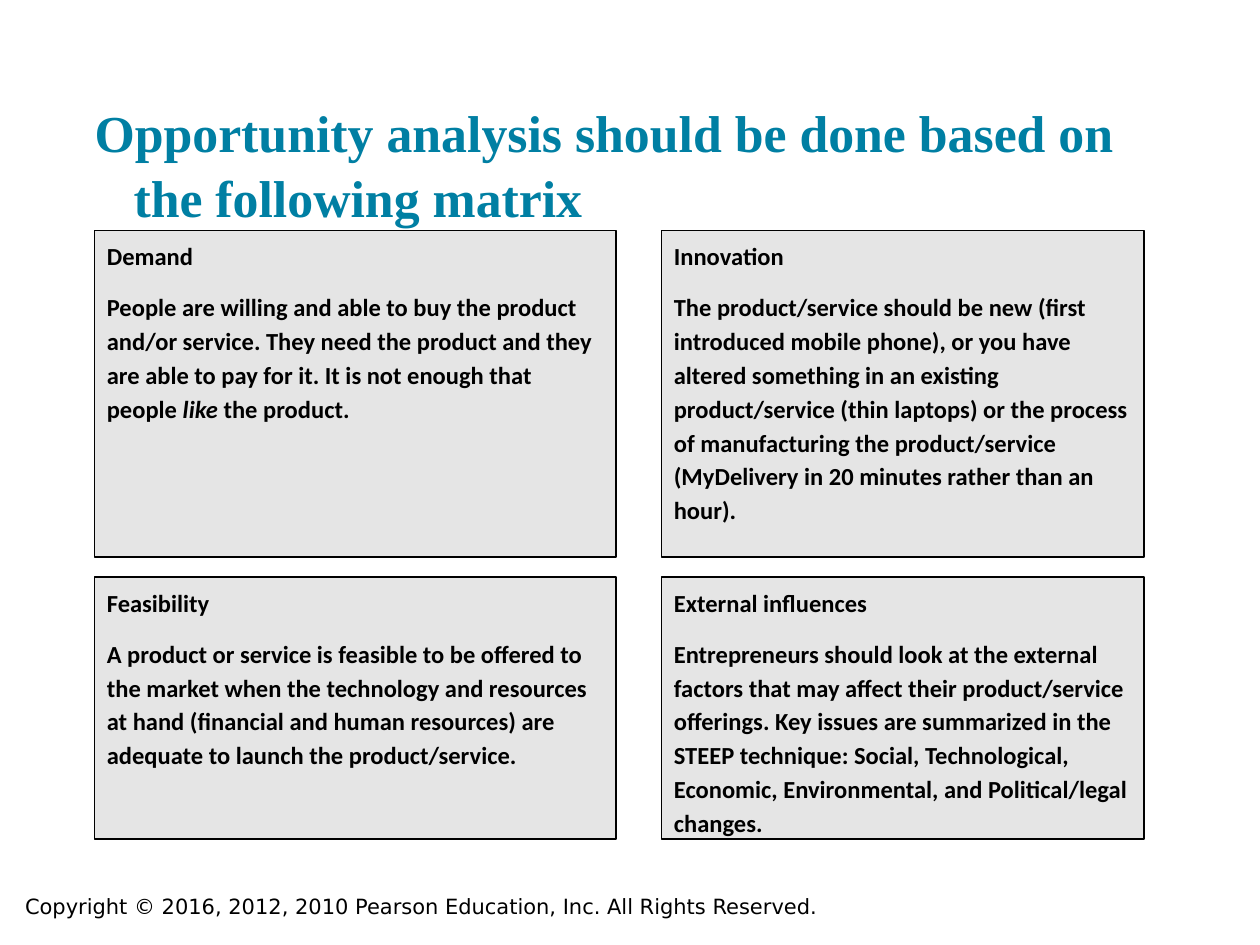
from dataclasses import dataclass

from pptx import Presentation
from pptx.dml.color import RGBColor
from pptx.enum.shapes import MSO_SHAPE as Shape
from pptx.enum.text import MSO_ANCHOR as Anchor, PP_ALIGN as Align
from pptx.util import Inches, Pt

COLORS = {"title": "007FA3", "text": "000000", "panel": "E5E5E5", "line": "000000"}
COLUMNS = [(0.75, 4.14), (5.25, 3.83)]  # left, width
ROWS = [(1.83, 2.59), (4.58, 2.08)]  # top, height
TITLE_INDENT = Inches(0.31)


@dataclass
class Panel:
    heading: str
    runs: list[tuple[str, bool]]  # text, italic


PANELS = [
    Panel("Demand", [
        ("People are willing and able to buy the product and/or service. They need "
         "the product and they are able to pay for it. It is not enough that people ", False),
        ("like ", True),
        ("the product.", False),
    ]),
    Panel("Innovation", [
        ("The product/service should be new (first introduced mobile phone), or you "
         "have altered something in an existing product/service (thin laptops) or the "
         "process of manufacturing the product/service (MyDelivery in 20 minutes "
         "rather than an hour).", False),
    ]),
    Panel("Feasibility", [
        ("A product or service is feasible to be offered to the market when the "
         "technology and resources at hand (financial and human resources) are "
         "adequate to launch the product/service.", False),
    ]),
    Panel("External influences", [
        ("Entrepreneurs should look at the external factors that may affect their "
         "product/service offerings. Key issues are summarized in the STEEP technique: "
         "Social, Technological, Economic, Environmental, and Political/legal changes.", False),
    ]),
]


def rgb(name: str) -> RGBColor:
    return RGBColor.from_string(COLORS[name])


def add_run(p, text: str, *, font="Calibri", size=14, color="text", bold=True, italic=False):
    r = p.add_run()
    r.text = text
    r.font.name = font
    r.font.size = Pt(size)
    r.font.color.rgb = rgb(color)
    r.font.bold = bold
    r.font.italic = italic


def add_title(slide, text: str):
    """Add the title with a hanging indent on its second line."""
    sp = slide.shapes.add_textbox(Inches(0.75), Inches(0.75), Inches(8.75), Inches(0.83))
    tf = sp.text_frame
    tf.word_wrap = True
    tf.margin_left = tf.margin_bottom = 0
    tf.margin_top = Inches(0.03)
    tf.margin_right = Inches(0.3)
    p = tf.paragraphs[0]
    p.line_spacing = 1.04
    pPr = p._p.get_or_add_pPr()
    pPr.set("marL", str(TITLE_INDENT))
    pPr.set("indent", str(-TITLE_INDENT))
    add_run(p, text, font="Times New Roman", size=29.6, color="title")


def add_panel(slide, panel: Panel, column: tuple[float, float], row: tuple[float, float]):
    (left, width), (top, height) = column, row
    sp = slide.shapes.add_shape(
        Shape.RECTANGLE, Inches(left), Inches(top), Inches(width), Inches(height))
    sp.shadow.inherit = False
    sp.fill.solid()
    sp.fill.fore_color.rgb = rgb("panel")
    sp.line.color.rgb = rgb("line")
    sp.line.width = Pt(0.75)
    tf = sp.text_frame
    tf.word_wrap = True
    tf.vertical_anchor = Anchor.TOP
    for i, runs in enumerate([[(panel.heading, False)], panel.runs]):
        p = tf.paragraphs[0] if i == 0 else tf.add_paragraph()
        p.alignment = Align.LEFT
        p.line_spacing = 1.15
        p.space_after = Pt(10)
        for text, italic in runs:
            add_run(p, text, italic=italic)


def add_copyright(slide, text: str):
    sp = slide.shapes.add_textbox(Inches(0.1), Inches(7.04), Inches(6.82), Inches(0.3))
    add_run(sp.text_frame.paragraphs[0], text, font="DejaVu Sans", size=12, bold=False)


def main():
    prs = Presentation()
    prs.slide_width, prs.slide_height = Inches(10), Inches(7.5)
    slide = prs.slides.add_slide(prs.slide_layouts[6])
    add_copyright(
        slide, "Copyright © 2016, 2012, 2010 Pearson Education, Inc. All Rights Reserved.")
    add_title(slide, "Opportunity analysis should be done based on the following matrix")
    for i, panel in enumerate(PANELS):
        add_panel(slide, panel, COLUMNS[i % 2], ROWS[i // 2])
    prs.save("out.pptx")


if __name__ == "__main__":
    main()
